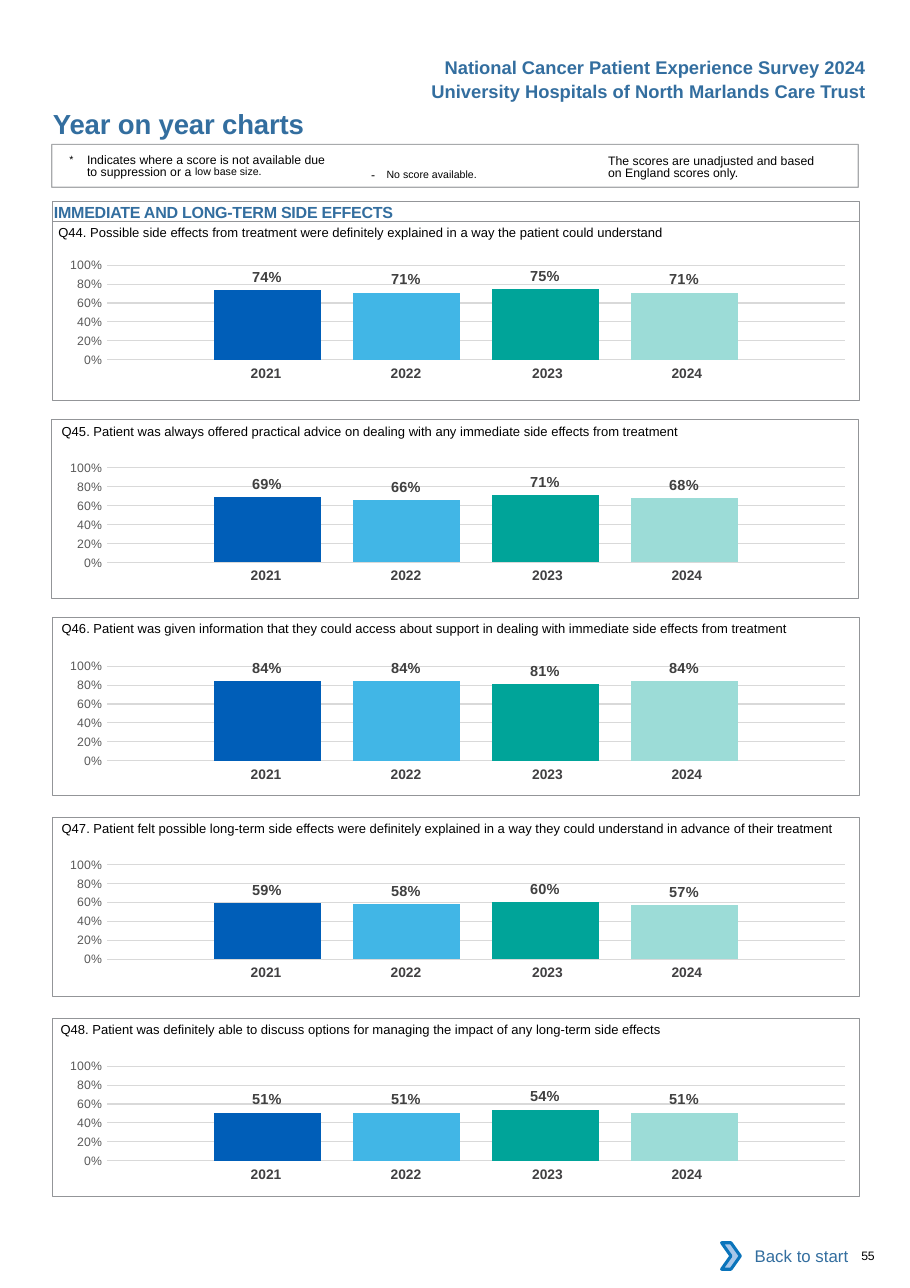
from lxml.etree import SubElement
from pptx import Presentation
from pptx.chart.data import CategoryChartData
from pptx.dml.color import RGBColor
from pptx.enum.chart import XL_CHART_TYPE, XL_LABEL_POSITION, XL_TICK_MARK
from pptx.enum.shapes import MSO_SHAPE
from pptx.enum.text import MSO_ANCHOR, PP_ALIGN
from pptx.oxml.ns import qn
from pptx.util import Pt

PX = 9144
BLUE, GREY, BLACK = "336E9F", "939598", "000000"
YEAR_COLORS = {"2021": "005EB8", "2022": "41B6E6", "2023": "00A499", "2024": "9CDCD7"}
YEAR_COLUMNS = [(127, 0), (127, 0), (134, 4), (127, 12)]
PLOT_LAYOUT = {"layoutTarget": "inner", "xMode": "edge", "yMode": "edge",
               "x": 0.079, "y": 0.145, "w": 0.915, "h": 0.666}
NO_TABLE_STYLE = "{2D5ABB26-0587-4C30-8999-92F81FD0307C}"
color = RGBColor.from_string


def write(frame, runs, size, hex_color, bold=False, align=PP_ALIGN.LEFT,
          margins=(0, 0, 0, 0), anchor=MSO_ANCHOR.TOP):
    left, top, right, bottom = [margin * PX for margin in margins]
    layout = {"word_wrap": True, "vertical_anchor": anchor, "margin_left": left,
              "margin_top": top, "margin_right": right, "margin_bottom": bottom}
    for name, value in layout.items():
        setattr(frame, name, value)
    paragraph = frame.paragraphs[0]
    paragraph.alignment = align
    for text, changes in runs:
        run = paragraph.add_run()
        run.text = text
        font_format = {"name": "Arial", "size": Pt(changes.get("size", size)), "bold": bold}
        for name, value in font_format.items():
            setattr(run.font, name, value)
        run.font.color.rgb = color(hex_color)
        for name in ("spc", "baseline"):
            if name in changes:
                run.font._element.set(name, str(changes[name]))
    return paragraph


def add_outline(kind, bounds, line=None, width=0.5, fill=None):
    shape = slide.shapes.add_shape(kind, *[length * PX for length in bounds])
    shape.shadow.inherit = False
    if fill:
        shape.fill.solid()
        shape.fill.fore_color.rgb = color(fill)
    else:
        shape.fill.background()
    if line:
        shape.line.color.rgb = color(line)
        shape.line.width = Pt(width)
    else:
        shape.line.fill.background()
    return shape


presentation = Presentation()
presentation.slide_width = 826 * PX
presentation.slide_height = 1169 * PX
slide = presentation.slides.add_slide(presentation.slide_layouts[5])

title = slide.shapes.title
for name, length in {"left": 48, "top": 97, "width": 450, "height": 30}.items():
    setattr(title, name, length * PX)
write(title.text_frame, [("Year on year charts", {"spc": -10})], 18, BLUE, bold=True)

header_lines = [
    (46, "National Cancer Patient Experience Survey 2024"),
    (68, "University Hospitals of North Marlands Care Trust"),
]
for top, text in header_lines:
    header = slide.shapes.add_textbox(300 * PX, top * PX, 496 * PX, 30 * PX)
    write(header.text_frame, [(text, {})], 12, BLUE, bold=True,
          align=PP_ALIGN.RIGHT, margins=(10, 5, 10, 5))

legend = add_outline(MSO_SHAPE.RECTANGLE, (47, 131, 732, 39), GREY, 0.75)
legend_color = legend.line._ln.find(".//" + qn("a:srgbClr"))
SubElement(legend_color, qn("a:alpha")).set("val", "80000")

small_raised = {"size": 12, "baseline": 7000}
legend_notes = [
    ((63, 138, 238, 27), (0, 3, 0, 0), 16, [
        ("*\t", {"size": 12, "baseline": 3000}),
        ("Indicates where a score is not available due to suppression or a ", {}),
        ("low base size.", small_raised)]),
    ((327, 141, 183, 24), (10, 5, 10, 5), 0, [
        ("- ", {"spc": 260}), ("No score available.", {"size": 12, "baseline": 3000})]),
    ((552, 138, 196, 27), (0, 3, 0, 0), 0, [
        ("The scores are unadjusted and based on England scores only.", {})]),
]
for bounds, margins, hanging, runs in legend_notes:
    note = slide.shapes.add_textbox(*[length * PX for length in bounds])
    paragraph = write(note.text_frame, runs, 8, BLACK, margins=margins)
    if margins[0] == 0:
        paragraph.line_spacing = Pt(8.1)
    if hanging:
        properties = paragraph._p.get_or_add_pPr()
        properties.set("marL", str(hanging * PX))
        properties.set("indent", str(-hanging * PX))

heading = add_outline(MSO_SHAPE.RECTANGLE, (48, 183, 732, 18), GREY)
write(heading.text_frame, [("IMMEDIATE AND LONG-TERM SIDE EFFECTS", {"spc": -15})],
      10.5, BLUE, bold=True, margins=(1, 1, 0, 0))

questions = [
    (48, 201, 222, 53, "Q44. Possible side effects from treatment were definitely explained "
     "in a way the patient could understand", (0.74, 0.71, 0.75, 0.71)),
    (47, 381, 406, 56, "Q45. Patient was always offered practical advice on dealing with any "
     "immediate side effects from treatment", (0.69, 0.66, 0.71, 0.68)),
    (48, 560, 586, 56, "Q46. Patient was given information that they could access about support "
     "in dealing with immediate side effects from treatment", (0.84, 0.84, 0.81, 0.84)),
    (48, 742, 766, 56, "Q47. Patient felt possible long-term side effects were definitely explained "
     "in a way they could understand in advance of their treatment", (0.59, 0.58, 0.6, 0.57)),
    (48, 924, 949, 55, "Q48. Patient was definitely able to discuss options for managing the impact "
     "of any long-term side effects", (0.51, 0.51, 0.54, 0.51)),
]
for panel_left, panel_top, chart_top, text_left, question, scores in questions:
    add_outline(MSO_SHAPE.RECTANGLE, (panel_left, panel_top, 732, 162), GREY)

    chart_data = CategoryChartData(number_format="0%")
    chart_data.categories = ["1"]
    for number, score in enumerate(scores, 1):
        chart_data.add_series(f"Series {number}", [score])
    chart = slide.shapes.add_chart(XL_CHART_TYPE.COLUMN_CLUSTERED, 39 * PX, chart_top * PX,
                                   732 * PX, 129 * PX, chart_data).chart
    chart.has_legend = False
    chart.has_title = False
    chart.font.name = "Calibri"
    chart.font.size = Pt(10)
    chart.category_axis.visible = False

    axis = chart.value_axis
    axis_format = {"minimum_scale": 0, "maximum_scale": 1, "major_unit": 0.2,
                   "major_tick_mark": XL_TICK_MARK.NONE, "has_major_gridlines": True}
    for name, value in axis_format.items():
        setattr(axis, name, value)
    axis.format.line.fill.background()
    axis.major_gridlines.format.line.color.rgb = color("D9D9D9")
    axis.major_gridlines.format.line.width = Pt(0.75)

    plot = chart.plots[0]
    plot.gap_width = 200
    plot.overlap = -30
    plot.vary_by_categories = False
    label_styles = [(axis.tick_labels, 8, "595959", False)]
    for series, fill in zip(plot.series, YEAR_COLORS.values()):
        series.format.fill.solid()
        series.format.fill.fore_color.rgb = color(fill)
        series.invert_if_negative = False
        series.data_labels.show_value = True
        series.data_labels.position = XL_LABEL_POSITION.OUTSIDE_END
        label_styles.append((series.data_labels, 9.5, "404040", True))
    for labels, size, hex_color, bold in label_styles:
        labels.number_format = "0%"
        labels.number_format_is_linked = False
        for name, value in {"name": "Arial", "size": Pt(size), "bold": bold}.items():
            setattr(labels.font, name, value)
        labels.font.color.rgb = color(hex_color)

    plot_area = chart._chartSpace.find(".//" + qn("c:plotArea"))
    for old_layout in plot_area.findall(qn("c:layout")):
        plot_area.remove(old_layout)
    plot_layout = SubElement(plot_area, qn("c:layout"))
    plot_area.insert(0, plot_layout)
    manual_layout = SubElement(plot_layout, qn("c:manualLayout"))
    for name, value in PLOT_LAYOUT.items():
        SubElement(manual_layout, qn(f"c:{name}")).set("val", str(value))

    table = slide.shapes.add_table(1, 4, 173 * PX, (chart_top + 105) * PX,
                                   515 * PX, 27 * PX).table
    table.first_row = False
    table.horz_banding = False
    table._tbl.tblPr.find(qn("a:tableStyleId")).text = NO_TABLE_STYLE
    for index, (year, (width, right)) in enumerate(zip(YEAR_COLORS, YEAR_COLUMNS)):
        table.columns[index].width = width * PX
        cell = table.cell(0, index)
        cell.fill.background()
        write(cell.text_frame, [(year, {})], 9, "414042", bold=True, align=PP_ALIGN.CENTER)
        for name, margin in {"left": 10, "top": 5, "right": right, "bottom": 5}.items():
            setattr(cell, f"margin_{name}", margin * PX)

    caption = slide.shapes.add_textbox(text_left * PX, (panel_top - 6) * PX, 724 * PX, 24 * PX)
    write(caption.text_frame, [(question, {})], 8.5, BLACK, margins=(0, 9, 0, 0))

back_button = add_outline(MSO_SHAPE.RECTANGLE, (662, 1119, 118, 42), fill="FFFFFF")
write(back_button.text_frame, [("Back to start", {})], 11, BLUE, align=PP_ALIGN.RIGHT,
      margins=(10, 5, 10, 5), anchor=MSO_ANCHOR.MIDDLE)
add_outline(MSO_SHAPE.CHEVRON, (655, 1128, 17, 24), "0A74BB", 2, "A8C7E9")

page_number = slide.shapes.add_textbox(772, 1133 * PX, 51 * PX, 13 * PX)
page_number.left = 772 * PX
write(page_number.text_frame, [("55", {"spc": -20})], 8, BLACK, margins=(10, 0, 0, 0))

presentation.save("out.pptx")
